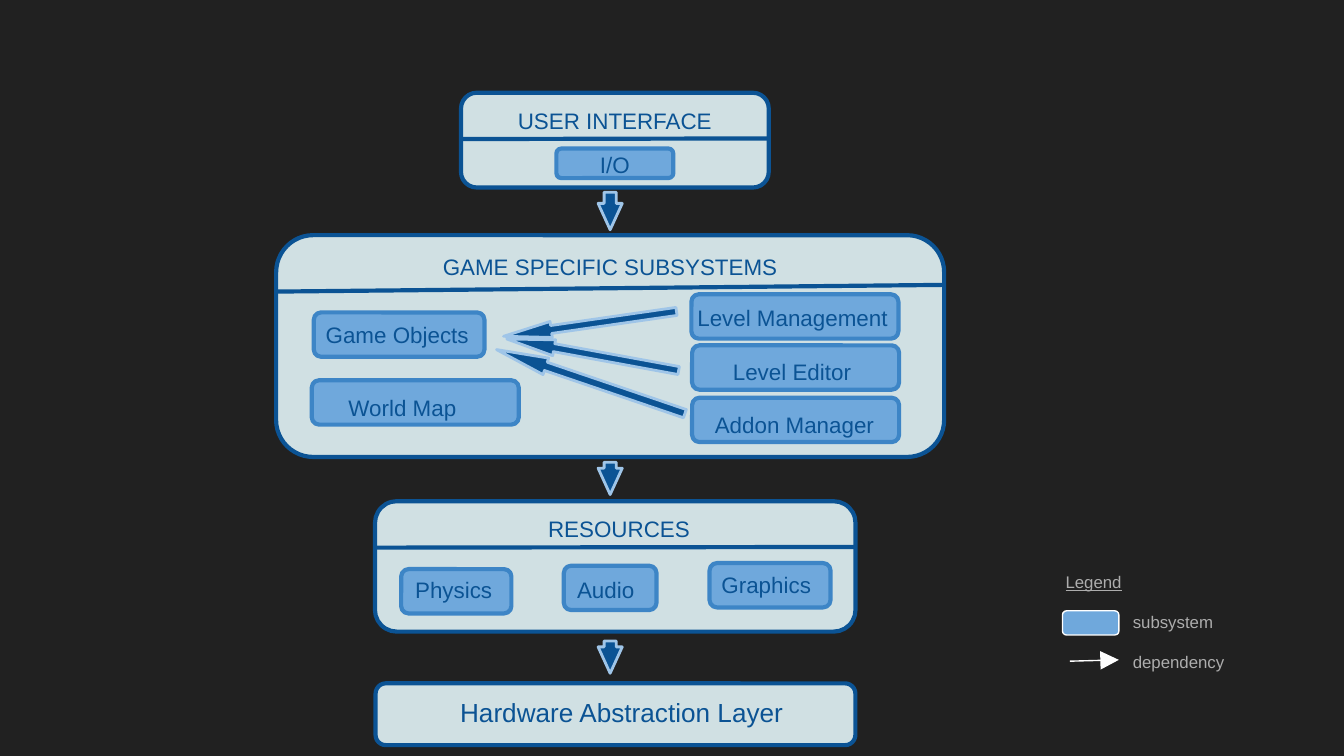
from lxml import etree
from pptx import Presentation
from pptx.dml.color import RGBColor
from pptx.enum.shapes import MSO_CONNECTOR, MSO_SHAPE
from pptx.enum.text import MSO_ANCHOR, PP_ALIGN
from pptx.oxml.ns import qn
from pptx.util import Inches, Pt

ROUND, DOWN = MSO_SHAPE.ROUNDED_RECTANGLE, MSO_SHAPE.DOWN_ARROW
STRAIGHT = MSO_CONNECTOR.STRAIGHT
LEFT, MID = PP_ALIGN.LEFT, PP_ALIGN.CENTER
TOP = MSO_ANCHOR.TOP

DARK = RGBColor(0x21, 0x21, 0x21)
PALE = RGBColor(0xD0, 0xE0, 0xE3)
NAVY = RGBColor(0x0B, 0x53, 0x94)
BLUE = RGBColor(0x6F, 0xA8, 0xDC)
EDGE = RGBColor(0x3D, 0x85, 0xC6)
GLOW = RGBColor(0x9F, 0xC5, 0xE8)
GREY = RGBColor(0xAD, 0xAD, 0xAD)
WHITE = RGBColor(0xFF, 0xFF, 0xFF)

deck = Presentation()
deck.slide_width = Inches(10)
deck.slide_height = deck.slide_width * 9 // 16
slide = deck.slides.add_slide(deck.slide_layouts[6])
slide.background.fill.solid()
slide.background.fill.fore_color.rgb = DARK
shapes = slide.shapes

# Square grid: the slide is 100 columns wide and 56.25 rows high
CELL = deck.slide_width // 100


def add_form(kind, box, fill, edge, width):
    form = shapes.add_shape(kind, *[int(n * CELL) for n in box])
    form.shadow.inherit = False
    form.fill.solid()
    form.fill.fore_color.rgb = fill
    form.line.color.rgb = edge
    form.line.width = Pt(width)
    return form


def add_line(ends, color, width):
    line = shapes.add_connector(STRAIGHT, *[int(n * CELL) for n in ends])
    line.line.color.rgb = color
    line.line.width = Pt(width)
    etree.SubElement(line._element.spPr, qn("a:effectLst"))
    return line


# Layers, from top to bottom
for box in [
    (34.3, 6.9, 22.9, 7.05),
    (20.55, 17.5, 49.7, 16.5),
    (27.9, 37.3, 35.75, 9.7),
    (27.95, 50.85, 35.7, 4.6),
]:
    add_form(ROUND, box, PALE, NAVY, 2.25)

# Rules below the layer titles
for ends in [
    (34.3, 10.35, 57.2, 10.3),
    (20.5, 21.7, 70.3, 21.2),
    (27.9, 40.75, 63.6, 40.7),
]:
    add_line(ends, NAVY, 2.25)

# Subsystems
for box in [
    (41.4, 11.05, 8.7, 2.2),
    (23.35, 23.25, 12.7, 3.3),
    (23.2, 28.3, 15.4, 3.3),
    (51.45, 21.9, 15.4, 3.3),
    (51.5, 25.7, 15.4, 3.3),
    (51.5, 29.6, 15.4, 3.3),
    (29.85, 42.35, 8.2, 3.3),
    (41.95, 42.1, 6.9, 3.3),
    (52.8, 41.9, 9, 3.3),
]:
    add_form(ROUND, box, BLUE, EDGE, 2.25)

# Dependencies: between layers, then between subsystems
for box, turn, head in [
    ((44.5, 14.3, 1.8, 2.8), 0, 1.09),
    ((44.5, 34.4, 1.8, 2.4), 0, 1.09),
    ((44.5, 47.7, 1.8, 2.4), 0, 1.09),
    ((43.3, 21, 1.3, 14.8), 108.8, 2.98),
    ((43.3, 17.6, 1.2, 13), 81.8, 2.98),
    ((43.5, 19.9, 1.2, 13), 100.4, 2.98),
]:
    arrow = add_form(DOWN, box, NAVY, GLOW, 1.5)
    arrow.rotation = turn
    arrow.adjustments[1] = head

# Legend marks
add_form(ROUND, (79.05, 45.45, 4.2, 1.8), BLUE, WHITE, 0.75)
key = add_line((79.6, 49.2, 83.25, 49.1), WHITE, 0.75)
etree.SubElement(
    key.line._get_or_add_ln(), qn("a:tailEnd"), type="triangle", w="lg", len="lg"
)

# Wording
for words, box, side, size, color in [
    ("USER INTERFACE", (36.5, 6.95, 18.5, 4.6), MID, 12, NAVY),
    ("I/O", (42.55, 10.25, 6.4, 3.2), MID, 12, NAVY),
    ("GAME SPECIFIC SUBSYSTEMS", (23.45, 17.8, 43.9, 5.8), MID, 12, NAVY),
    ("Game Objects", (23.25, 22.9, 12.7, 2.7), LEFT, 12, NAVY),
    ("World Map", (24.95, 28.3, 12, 3.3), LEFT, 12, NAVY),
    ("Level Management", (50.9, 21.65, 17.5, 3.3), LEFT, 12, NAVY),
    ("Level Editor", (53.55, 25.65, 11.4, 3.3), LEFT, 12, NAVY),
    ("Addon Manager", (52.2, 29.6, 14.1, 3.3), LEFT, 12, NAVY),
    ("RESOURCES", (39.8, 37.3, 13.4, 3.4), LEFT, 12, NAVY),
    ("Physics", (29.9, 41.9, 8.2, 3.7), LEFT, 12, NAVY),
    ("Audio", (41.95, 41.9, 6.9, 2.7), LEFT, 12, NAVY),
    ("Graphics", (52.7, 41.5, 9, 2.7), LEFT, 12, NAVY),
    ("Hardware Abstraction Layer", (33.25, 50.85, 26.6, 2.8), LEFT, 14, NAVY),
    ("Legend\nsubsystem\ndependency", (78.3, 41.55, 17.5, 11.6), LEFT, 9, GREY),
]:
    frame = shapes.add_textbox(*[int(n * CELL) for n in box]).text_frame
    frame.word_wrap = True
    frame.vertical_anchor = TOP
    frame.margin_left = frame.margin_top = frame.margin_bottom = CELL
    frame.margin_right = CELL if side == MID else 0
    frame.text = words
    for para in frame.paragraphs:
        para.alignment = side
        font = para.runs[0].font
        font.name, font.size = "Arial", Pt(size)
        font.color.rgb = color

# The legend is the last frame: heading underlined, entries indented
title, *items = frame.paragraphs
title.runs[0].font.underline = True
for item in items:
    item.space_before = Pt(10.7)
    item._p.get_or_add_pPr().set("indent", str(5 * CELL))

deck.save("out.pptx")
